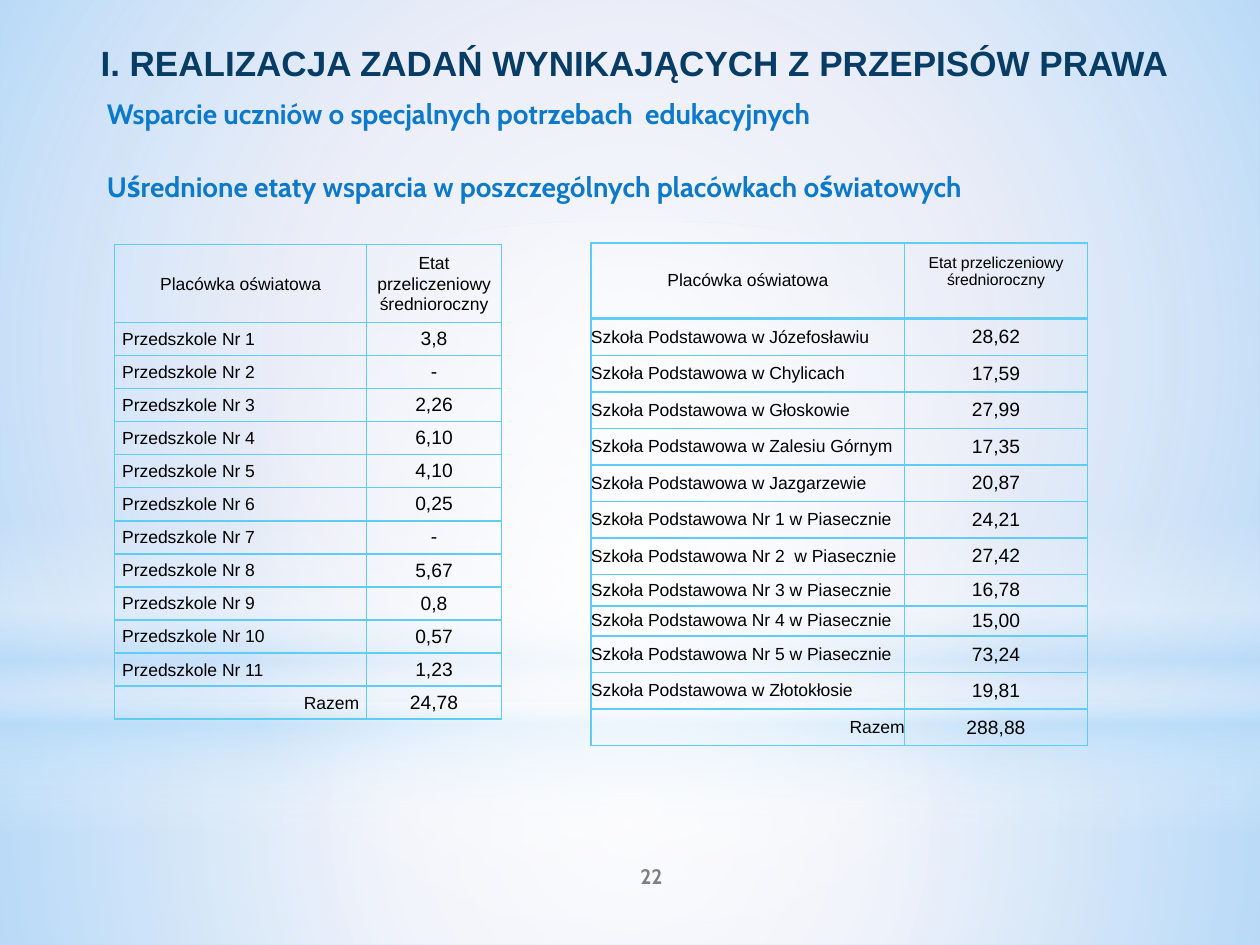
from lxml.etree import SubElement
from pptx import Presentation
from pptx.dml.color import RGBColor
from pptx.enum.shapes import MSO_SHAPE
from pptx.enum.text import MSO_ANCHOR, PP_ALIGN
from pptx.oxml.ns import qn
from pptx.util import Inches, Pt

COLORS = {
    "backdrop": "CAD1EE", "white": "FFFFFF", "sky": "B4DCFA",
    "title": "073C65", "heading": "0D79CA", "number": "7F7F7F",
    "text": "000000", "border": "5ECCF3",
}
LEFT, CENTER, RIGHT, JUSTIFY = (
    PP_ALIGN.LEFT, PP_ALIGN.CENTER, PP_ALIGN.RIGHT, PP_ALIGN.JUSTIFY)

# Gradient stops: position, colour, opacity (all in percent)
GLOWS = [
    (MSO_SHAPE.RECTANGLE, (0, 5.58, 10, 1.92), True,
     [(0, "white", 91), (37, "white", 76), (100, "sky", 79)]),
    (MSO_SHAPE.RECTANGLE, (0, 0, 10, 5.58), True,
     [(0, "white", 89), (48, "white", 62), (100, "sky", 79)]),
    (MSO_SHAPE.RECTANGLE, (0, 4.12, 10, 2.5), False,
     [(0, "white", 0), (29, "white", 30), (45, "sky", 40),
      (55, "white", 26), (65, "sky", 60), (100, "white", 0)]),
    (MSO_SHAPE.OVAL, (0, 1.75, 10, 5.58), True,
     [(0, "white", 100), (56, "white", 0)]),
]

HEADER = ("Placówka oświatowa", "Etat przeliczeniowy średnioroczny")
KINDERGARTEN_POSTS = ["3,8", "-", "2,26", "6,10", "4,10", "0,25",
                      "-", "5,67", "0,8", "0,57", "1,23"]
KINDERGARTENS = [(f"Przedszkole Nr {number}", posts)
                 for number, posts in enumerate(KINDERGARTEN_POSTS, 1)]
SCHOOLS = [(f"Szkoła Podstawowa {name}", posts) for name, posts in [
    ("w Józefosławiu", "28,62"),
    ("w Chylicach", "17,59"),
    ("w Głoskowie", "27,99"),
    ("w Zalesiu Górnym", "17,35"),
    ("w Jazgarzewie", "20,87"),
    ("Nr 1 w Piasecznie", "24,21"),
    ("Nr 2  w Piasecznie", "27,42"),
    ("Nr 3 w Piasecznie", "16,78"),
    ("Nr 4 w Piasecznie", "15,00"),
    ("Nr 5 w Piasecznie", "73,24"),
    ("w Złotokłosie", "19,81"),
]]


def color(name):
    return RGBColor.from_string(COLORS[name])


def add_glow(page, preset, place, radial, stops):
    """Add a borderless shape with a translucent gradient."""
    shape = page.shapes.add_shape(preset, *map(Inches, place))
    shape.shadow.inherit = False
    shape.line.fill.background()
    shape.fill.background()
    empty_fill = shape._element.spPr.find(qn("a:noFill"))
    gradient = empty_fill.makeelement(qn("a:gradFill"), {"rotWithShape": "1"})
    stop_list = SubElement(gradient, qn("a:gsLst"))
    for position, name, opacity in stops:
        stop = SubElement(stop_list, qn("a:gs"), pos=str(position * 1000))
        tint = SubElement(stop, qn("a:srgbClr"), val=COLORS[name])
        SubElement(tint, qn("a:alpha"), val=str(opacity * 1000))
    if radial:
        center = SubElement(gradient, qn("a:path"), path="circle")
        SubElement(center, qn("a:fillToRect"),
                   {side: "50000" for side in "ltrb"})
    else:
        SubElement(gradient, qn("a:lin"), ang="5400000", scaled="0")
    shape._element.spPr.replace(empty_fill, gradient)


def write(frame, text, align, **font_format):
    """Put one formatted paragraph into a text frame."""
    para = frame.paragraphs[0]
    para.alignment = align
    span = para.add_run()
    span.text = text
    span.font.color.rgb = color(font_format.pop("color"))
    for name, value in font_format.items():
        setattr(span.font, name, value)
    return para


def add_text(page, place, text, align, anchor=MSO_ANCHOR.TOP, **font_format):
    box = page.shapes.add_textbox(*map(Inches, place))
    frame = box.text_frame
    frame.word_wrap = True
    frame.vertical_anchor = anchor
    return write(frame, text, align, bold=True, **font_format)


def draw_borders(cell, bottom_width):
    properties = cell._tc.get_or_add_tcPr()
    for side, width in zip("LRTB", (1, 1, 1, bottom_width)):
        line = SubElement(properties, qn(f"a:ln{side}"), w=str(Pt(width)))
        fill = SubElement(line, qn("a:solidFill"))
        SubElement(fill, qn("a:srgbClr"), val=COLORS["border"])


def add_posts_table(page, place, widths, heights, entries, total, name_align,
                    side_margin=0, spacing=None, header_size=10, rule=1):
    """Add a table of institutions and posts, closed by a total row."""
    rows = [HEADER, *entries, ("Razem", total)]
    table = page.shapes.add_table(len(rows), 2, *map(Inches, place)).table
    table.first_row = table.horz_banding = False
    for column, width in zip(table.columns, widths):
        column.width = Inches(width)
    for index, (row, values) in enumerate(zip(table.rows, rows)):
        row.height = Inches(heights[index])
        is_header, is_total = index == 0, index == len(rows) - 1
        name_side = CENTER if is_header else RIGHT if is_total else name_align
        sizes = (10, header_size if is_header else 11)
        for cell, text, align, size in zip(
                row.cells, values, (name_side, CENTER), sizes):
            draw_borders(cell, rule if is_header else 1)
            cell.fill.background()
            cell.vertical_anchor = MSO_ANCHOR.MIDDLE
            cell.margin_left = cell.margin_right = Inches(side_margin)
            cell.margin_top = cell.margin_bottom = 0
            para = write(cell.text_frame, text, align, name="Arial",
                         size=Pt(size), color="text")
            if spacing and (is_header or size == 10):
                para.line_spacing = spacing
    return table


def main():
    deck = Presentation()
    deck.slide_width, deck.slide_height = Inches(10), Inches(7.5)
    page = deck.slides.add_slide(deck.slide_layouts[6])

    # Background
    page.background.fill.solid()
    page.background.fill.fore_color.rgb = color("backdrop")
    for glow in GLOWS:
        add_glow(page, *glow)

    # Page number, title and headings
    add_text(page, (4.17, 6.75, 2, 0.4), "22", CENTER, MSO_ANCHOR.MIDDLE,
             name="Cabin", size=Pt(12), color="number")
    title = add_text(page, (0.5, 0.28, 9, 0.87),
                     "I. REALIZACJA ZADAŃ WYNIKAJĄCYCH Z PRZEPISÓW PRAWA",
                     LEFT, name="Arial", size=Pt(20), color="title")
    title._p.get_or_add_pPr().set("marL", str(Inches(0.2)))
    heading = {"name": "Cabin", "size": Pt(16), "color": "heading"}
    add_text(page, (0.75, 0.72, 8.56, 0.37),
             "Wsparcie uczniów o specjalnych potrzebach  edukacyjnych",
             LEFT, **heading)
    add_text(page, (0.75, 1.3, 8.62, 0.37),
             "Uśrednione etaty wsparcia w poszczególnych placówkach "
             "oświatowych", JUSTIFY, **heading)

    # Kindergartens
    add_posts_table(page, (0.91, 1.94, 3.07, 3.77), (2, 1.07),
                    [0.62] + [3.15 / 12] * 12, KINDERGARTENS, "24,78",
                    JUSTIFY, side_margin=0.06, spacing=1.06)

    # Primary schools
    schools = add_posts_table(page, (4.69, 1.93, 3.94, 4), (2.49, 1.45),
                              [0.6] + [0.29] * 7 + [0.25, 0.24] + [0.29] * 3,
                              SCHOOLS, "288,88", LEFT, header_size=9, rule=2)
    posts_header = schools.cell(0, 1)
    for side, margin in {"left": 0.1, "right": 0.1,
                         "top": 0.05, "bottom": 0.2}.items():
        setattr(posts_header, f"margin_{side}", Inches(margin))

    deck.save("out.pptx")


if __name__ == "__main__":
    main()
